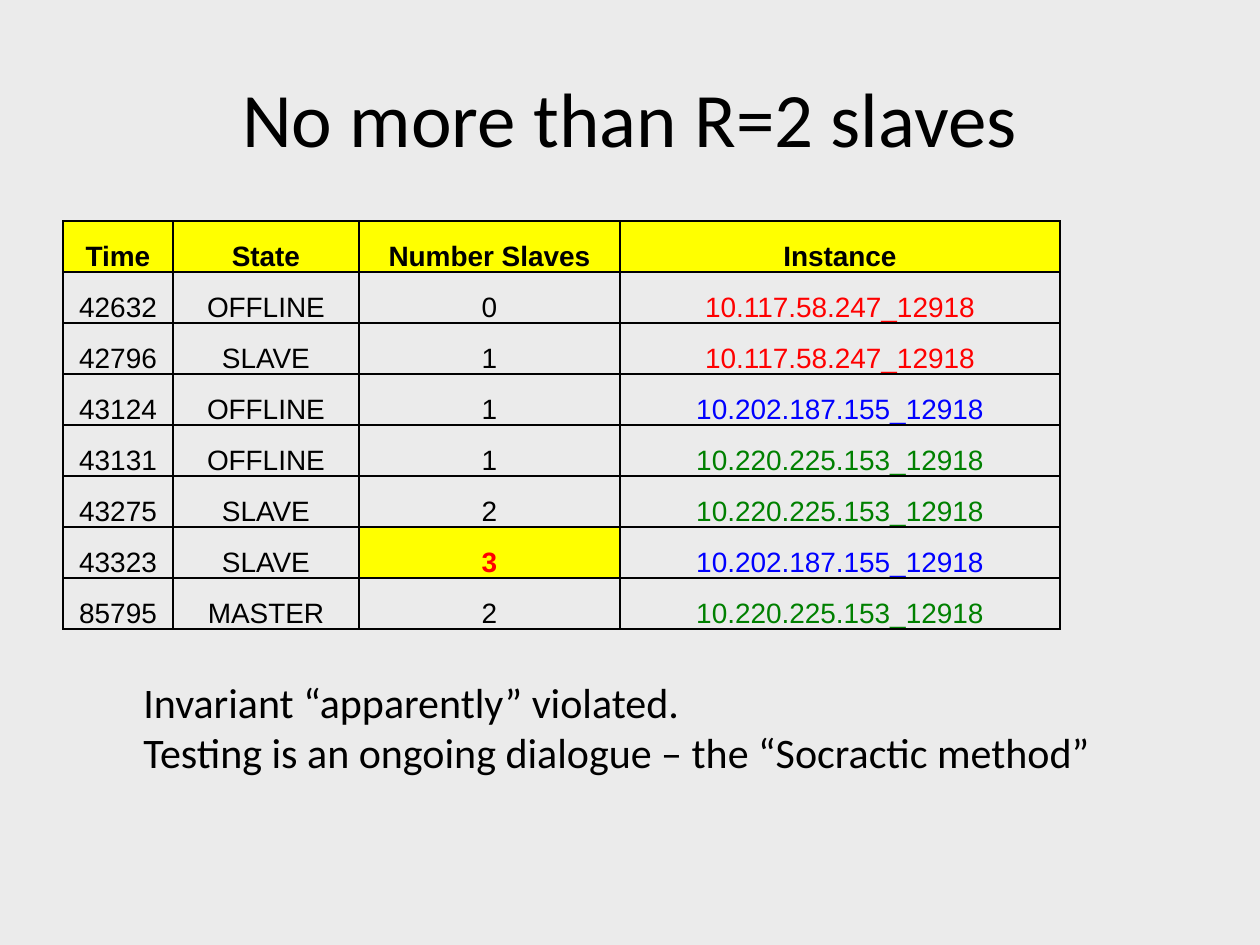
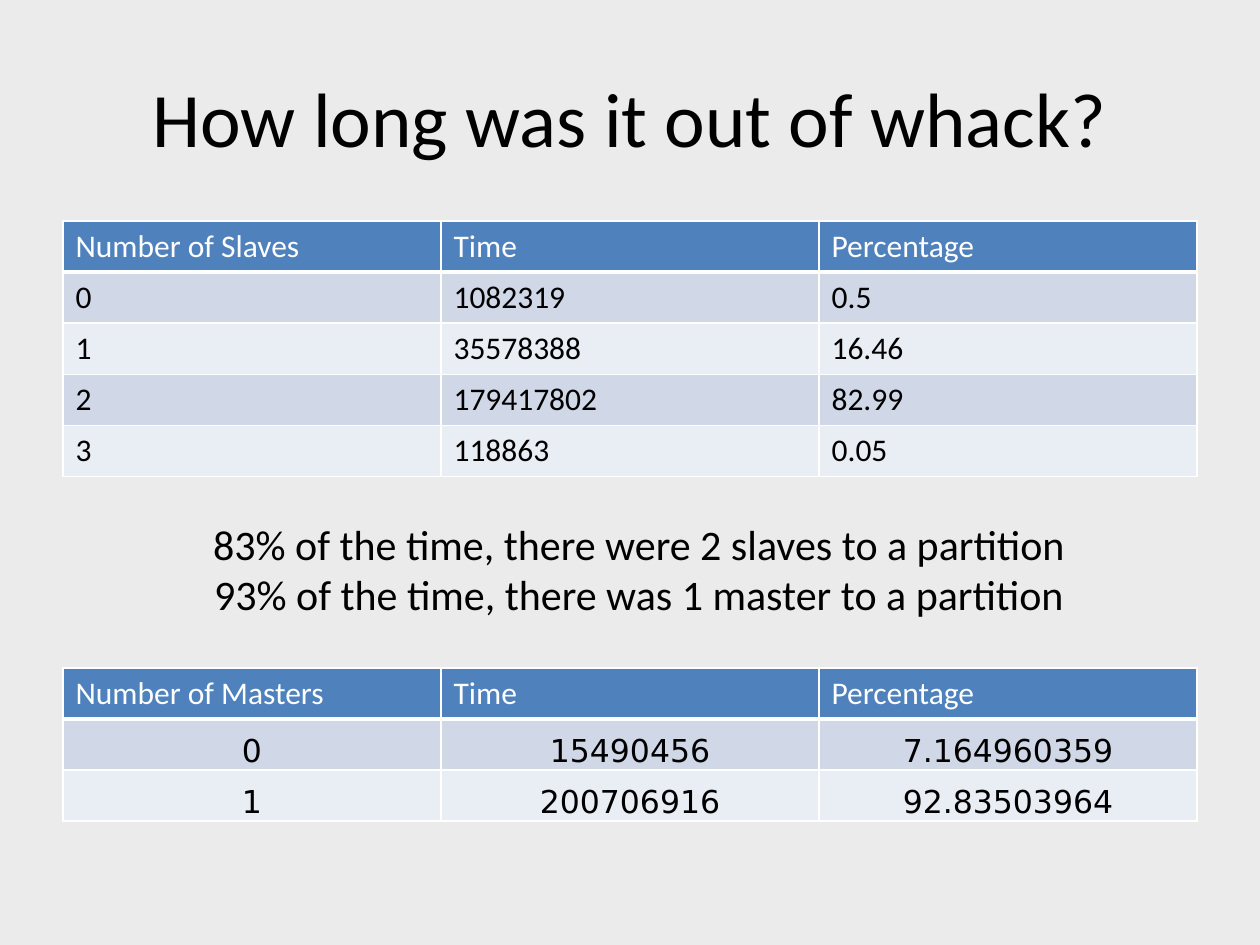
from lxml.etree import SubElement
from pptx import Presentation
from pptx.dml.color import RGBColor
from pptx.enum.text import MSO_ANCHOR as ANCHOR, PP_ALIGN as ALIGN
from pptx.oxml.ns import qn
from pptx.util import Emu, Pt

PX = 914400 / 126
BLACK, WHITE, YELLOW = "000000", "FFFFFF", "FFFF00"
RED, BLUE, GREEN = "FF0000", "0000FF", "008000"
GREY, HEADER_BLUE = "EBEBEB", "4F81BD"
BANDS = ["D0D8E8", "E9EDF4"]
ROW_H = 51
MARGIN, TABLE_TOP = 63, 221

# Text formats
TITLE = dict(name="Calibri", size=44, color=BLACK)
NOTE = dict(TITLE, size=24)
BODY = dict(TITLE, size=18)
HEAD = dict(BODY, color=WHITE)
SHEET = dict(name="Arial", size=16, color=BLACK)
MASTER = dict(BODY, name="DejaVu Sans")

TRACE = [
    ["Time", "State", "Number Slaves", "Instance"],
    ["42632", "OFFLINE", "0", "10.117.58.247_12918"],
    ["42796", "SLAVE", "1", "10.117.58.247_12918"],
    ["43124", "OFFLINE", "1", "10.202.187.155_12918"],
    ["43131", "OFFLINE", "1", "10.220.225.153_12918"],
    ["43275", "SLAVE", "2", "10.220.225.153_12918"],
    ["43323", "SLAVE", "3", "10.202.187.155_12918"],
    ["85795", "MASTER", "2", "10.220.225.153_12918"],
]
INSTANCE_COLORS = {
    "10.117.58.247_12918": RED,
    "10.202.187.155_12918": BLUE,
    "10.220.225.153_12918": GREEN,
}
SLAVES = [
    ["Number of Slaves", "Time", "Percentage"],
    ["0", "1082319", "0.5"],
    ["1", "35578388", "16.46"],
    ["2", "179417802", "82.99"],
    ["3", "118863", "0.05"],
]
MASTERS = [
    ["Number of Masters", "Time", "Percentage"],
    ["0", "15490456", "7.164960359"],
    ["1", "200706916", "92.83503964"],
]


def px(n):
    return Emu(round(n * PX))


def rgb(color):
    return RGBColor.from_string(color)


def write(tf, lines, fmt, align):
    """Fill a text frame, one paragraph a line."""
    for i, line in enumerate(lines):
        p = tf.add_paragraph() if i else tf.paragraphs[0]
        p.alignment = align
        r = p.add_run()
        r.text = line
        for key, value in fmt.items():
            if key == "color":
                r.font.color.rgb = rgb(value)
            else:
                setattr(r.font, key, Pt(value) if key == "size" else value)


def add_slide(prs, title):
    s = prs.slides.add_slide(prs.slide_layouts[5])
    sp = s.shapes.title
    sp.left, sp.top, sp.width, sp.height = map(px, (MARGIN, 38, 1134, 157))
    sp.text_frame.vertical_anchor = ANCHOR.MIDDLE
    write(sp.text_frame, [title], TITLE, ALIGN.CENTER)
    return s


def add_note(s, box, lines, align):
    sp = s.shapes.add_textbox(*map(px, box))
    sp.text_frame.word_wrap = True
    write(sp.text_frame, lines, NOTE, align)


def set_borders(cell, color, bottom):
    tc_pr = cell._tc.get_or_add_tcPr()
    for side, width in dict(L=1, R=1, T=1, B=bottom).items():
        ln = SubElement(tc_pr, qn(f"a:ln{side}"), w=str(Pt(width)))
        fill = SubElement(ln, qn("a:solidFill"))
        SubElement(fill, qn("a:srgbClr"), val=color)


def add_grid(s, left, top, widths, rows, line, style):
    """Add a table; style(row, column, text) gives format, fill, is_sheet."""
    box = left, top, sum(widths), ROW_H * len(rows)
    table = s.shapes.add_table(len(rows), len(widths), *map(px, box)).table
    table.first_row = table.horz_banding = False
    for column, width in zip(table.columns, widths):
        column.width = px(width)
    for i, row in enumerate(rows):
        table.rows[i].height = px(ROW_H)
        for j, text in enumerate(row):
            cell = table.cell(i, j)
            fmt, fill, is_sheet = style(i, j, text)
            thick = i == 0 and line == WHITE
            set_borders(cell, line, 3 if thick else 1)
            if fill:
                cell.fill.solid()
                cell.fill.fore_color.rgb = rgb(fill)
            else:
                cell.fill.background()
            if is_sheet:
                cell.vertical_anchor = ANCHOR.BOTTOM
                cell.margin_left = cell.margin_right = cell.margin_top = px(1)
                cell.margin_bottom = 0
            align = ALIGN.CENTER if is_sheet else ALIGN.LEFT
            write(cell.text_frame, [text], fmt, align)


def trace_style(i, j, text):
    if i == 0:
        return dict(SHEET, bold=True), YELLOW, True
    if j == 2 and text == "3":  # more slaves than allowed
        return dict(SHEET, bold=True, color=RED), YELLOW, True
    return dict(SHEET, color=INSTANCE_COLORS.get(text, BLACK)), None, True


def banded_style(body, is_sheet):
    def style(i, j, text):
        if i == 0:
            return HEAD, HEADER_BLUE, False
        return body, BANDS[(i - 1) % 2], is_sheet
    return style


def trace_slide(prs):
    s = add_slide(prs, "No more than R=2 slaves")
    add_grid(s, MARGIN, TABLE_TOP, [110, 186, 261, 440], TRACE, BLACK, trace_style)
    add_note(s, (131, 670, 1019, 115),
             ["Invariant “apparently” violated.",
              "Testing is an ongoing dialogue – the “Socractic method”"],
             ALIGN.LEFT)


def duration_slide(prs):
    s = add_slide(prs, "How long was it out of whack?")
    thirds = [378] * 3
    add_grid(s, MARGIN, TABLE_TOP, thirds, SLAVES, WHITE, banded_style(BODY, False))
    add_note(s, (126, 512, 1026, 115),
             ["83% of the time, there were 2 slaves to a partition",
              "93% of the time, there was 1 master to a partition"],
             ALIGN.CENTER)
    add_grid(s, MARGIN, 668, thirds, MASTERS, WHITE, banded_style(MASTER, True))


def main():
    prs = Presentation()
    prs.slide_width, prs.slide_height = px(1260), px(945)
    # Shared background
    fill = prs.slide_master.background.fill
    fill.solid()
    fill.fore_color.rgb = rgb(GREY)
    trace_slide(prs)
    duration_slide(prs)
    prs.save("out.pptx")


if __name__ == "__main__":
    main()
